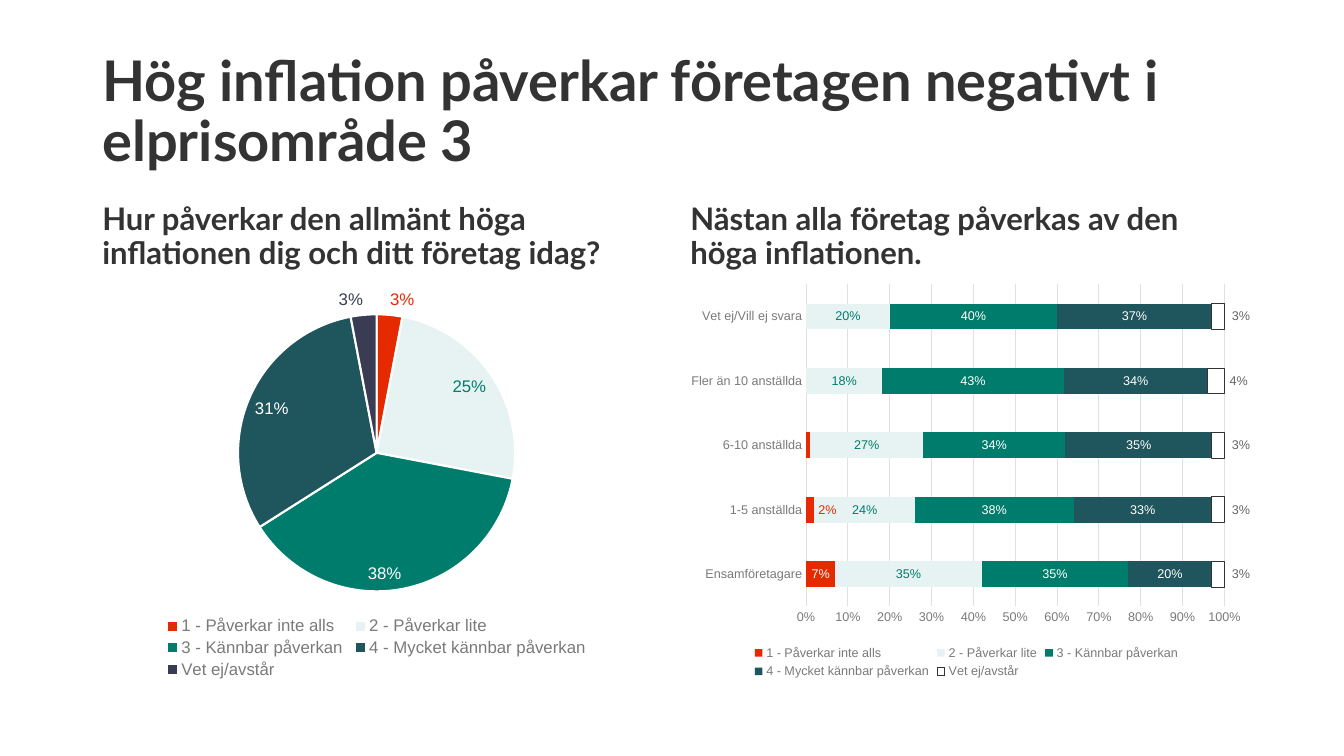
from dataclasses import dataclass

from lxml import etree
from pptx import Presentation
from pptx.chart.data import CategoryChartData
from pptx.dml.color import RGBColor
from pptx.enum.chart import XL_CHART_TYPE, XL_LABEL_POSITION, XL_LEGEND_POSITION, XL_TICK_MARK
from pptx.enum.text import MSO_ANCHOR, MSO_AUTO_SIZE, PP_ALIGN
from pptx.oxml.ns import qn
from pptx.util import Pt

PIE = XL_CHART_TYPE.PIE
STACKED_BARS = XL_CHART_TYPE.BAR_STACKED_100
CENTER = XL_LABEL_POSITION.CENTER
INSIDE = XL_LABEL_POSITION.INSIDE_END
OUTSIDE = XL_LABEL_POSITION.OUTSIDE_END
LEGEND_BOTTOM = XL_LEGEND_POSITION.BOTTOM
NO_TICK = XL_TICK_MARK.NONE
MIDDLE = MSO_ANCHOR.MIDDLE
BOTTOM = MSO_ANCHOR.BOTTOM
LEFT = PP_ALIGN.LEFT
NO_AUTOFIT = MSO_AUTO_SIZE.NONE
C15 = "http://schemas.microsoft.com/office/drawing/2012/chart"
LABEL_EXTENSION = "{CE6537A1-D6FC-4f65-9D91-7224C49458BB}"


@dataclass(frozen=True)
class Theme:
    heading_font: str = "Lato"
    chart_font: str = "Arial"
    ink: str = "333333"
    muted: str = "7A7A7A"
    label_gray: str = "666666"
    grid: str = "E0E0E0"
    white: str = "FFFFFF"
    red: str = "E52A00"
    mint: str = "E6F3F2"
    green: str = "007C6C"
    teal: str = "1F555C"
    navy: str = "3A3C54"
    title_size: float = 40
    subhead_size: float = 22.2
    chart_size: float = 10
    pie_size: float = 12
    bar_size: float = 9


THEME = Theme()
PERCENT = "###0%"
ANSWERS = ["1 - Påverkar inte alls", "2 - Påverkar lite", "3 - Kännbar påverkan",
           "4 - Mycket kännbar påverkan", "Vet ej/avstår"]
PIE_SHARES = [0.03, 0.25, 0.38, 0.31, 0.03]
COMPANY_SIZES = ["Ensamföretagare", "1-5 anställda", "6-10 anställda",
                 "Fler än 10 anställda", "Vet ej/Vill ej svara"]
SHARES_BY_ANSWER = [
    [0.07, 0.02, 0.01, 0, 0],
    [0.35, 0.24, 0.27, 0.18, 0.2],
    [0.35, 0.38, 0.34, 0.43, 0.4],
    [0.2, 0.33, 0.35, 0.34, 0.37],
    [0.03, 0.03, 0.03, 0.04, 0.03],
]


def rgb(color):
    return RGBColor.from_string(color)


def style_font(font, face, size, color, bold=False):
    font.name = face
    font.size = Pt(size)
    font.bold = bold
    font.color.rgb = rgb(color)


def style_chart_font(font, size, color):
    style_font(font, THEME.chart_font, size, color)


def fill_solid(part, color):
    part.format.fill.solid()
    part.format.fill.fore_color.rgb = rgb(color)


def draw_line(line, color, width):
    line.color.rgb = rgb(color)
    line.width = Pt(width)


def write_heading(shape, text, box, size, anchor):
    shape.left, shape.top, shape.width, shape.height = map(Pt, box)
    frame = shape.text_frame
    frame.text = text
    frame.word_wrap = True
    frame.auto_size = NO_AUTOFIT
    frame.vertical_anchor = anchor
    paragraph = frame.paragraphs[0]
    paragraph.alignment = LEFT
    paragraph.line_spacing = 0.9
    style_font(paragraph.runs[0].font, THEME.heading_font, size, THEME.ink, True)


def add_subhead(slide, text, box):
    write_heading(slide.shapes.add_textbox(*map(Pt, box)), text, box, THEME.subhead_size, BOTTOM)


def set_layout(parent, index, **fractions):
    for old in parent.findall(qn("c:layout")):
        parent.remove(old)
    layout = etree.Element(qn("c:layout"))
    manual = etree.SubElement(layout, qn("c:manualLayout"))
    for tag, value in fractions.items():
        etree.SubElement(manual, qn(f"c:{tag}")).set("val", str(value))
    parent.insert(index, layout)


def place_in_chart(parent, index, x, y, w, h, **target):
    set_layout(parent, index, **target, xMode="edge", yMode="edge", x=x, y=y, w=w, h=h)


def add_survey_chart(slide, kind, box, categories, series, legend_size, plot_box, legend_box):
    data = CategoryChartData(number_format=PERCENT)
    data.categories = categories
    for name, shares in series:
        data.add_series(name, shares)
    chart = slide.shapes.add_chart(kind, *map(Pt, box), data).chart
    chart.has_title = False
    style_chart_font(chart.font, THEME.chart_size, THEME.ink)
    chart.has_legend = True
    legend = chart.legend
    legend.position = LEGEND_BOTTOM
    legend.include_in_layout = False
    style_chart_font(legend.font, legend_size, THEME.muted)
    place_in_chart(chart.plots[0]._element.getparent(), 0, *plot_box, layoutTarget="inner")
    place_in_chart(legend._element, 1, *legend_box)
    return chart


def show_labels(series, size, color, position):
    labels = series.data_labels
    labels.show_value = True
    labels.number_format = PERCENT
    labels.number_format_is_linked = False
    labels.position = position
    style_chart_font(labels.font, size, color)


def point_label(series, index, size, color, position):
    label = series.points[index].data_label
    style_chart_font(label.font, size, color)
    label.position = position
    return series.data_labels._element.xpath(f'c:dLbl[c:idx/@val="{index}"]')[0]


def hide_label(element):
    for child in element[1:]:
        element.remove(child)
    etree.SubElement(element, qn("c:delete")).set("val", "1")


def hide_leader_lines(series):
    labels = series.data_labels._element
    for switch in labels.findall(qn("c:showLeaderLines")):
        switch.set("val", "0")
    extensions = etree.SubElement(labels, qn("c:extLst"))
    extension = etree.SubElement(extensions, qn("c:ext"), nsmap={"c15": C15})
    extension.set("uri", LABEL_EXTENSION)
    etree.SubElement(extension, f"{{{C15}}}showLeaderLines").set("val", "0")


def add_answer_pie(slide, box):
    chart = add_survey_chart(slide, PIE, box, ANSWERS, [("Series 1", PIE_SHARES)], THEME.pie_size,
                             (0.256, 0.094, 0.488, 0.682), (0.12, 0.83, 0.76, 0.17))
    chart.plots[0].vary_by_categories = True
    answers = chart.plots[0].series[0]
    show_labels(answers, THEME.pie_size, THEME.white, INSIDE)
    for index, color in enumerate([THEME.red, THEME.mint, THEME.green, THEME.teal, THEME.navy]):
        fill_solid(answers.points[index], color)
        draw_line(answers.points[index].format.line, THEME.white, 1.5)
    for index, color, position in [(0, THEME.red, OUTSIDE), (1, THEME.green, INSIDE),
                                   (4, THEME.navy, OUTSIDE)]:
        point_label(answers, index, THEME.pie_size, color, position)


def style_axes(chart):
    sizes, shares = chart.category_axis, chart.value_axis
    for axis in (sizes, shares):
        axis.major_tick_mark = axis.minor_tick_mark = NO_TICK
        style_chart_font(axis.tick_labels.font, THEME.bar_size, THEME.muted)
    draw_line(sizes.format.line, THEME.grid, 0.75)
    shares.format.line.fill.background()
    shares.minimum_scale, shares.maximum_scale, shares.major_unit = 0, 1, 0.1
    draw_line(shares.major_gridlines.format.line, THEME.grid, 0.75)
    shares.tick_labels.number_format = PERCENT
    shares.tick_labels.number_format_is_linked = False


def add_company_bars(slide, box):
    chart = add_survey_chart(slide, STACKED_BARS, box, COMPANY_SIZES, zip(ANSWERS, SHARES_BY_ANSWER),
                             THEME.bar_size, (0.22, 0.02, 0.732, 0.793), (0.123, 0.9, 0.755, 0.1))
    style_axes(chart)
    plot = chart.plots[0]
    plot.gap_width, plot.overlap, plot.vary_by_categories = 150, 100, False
    fills = [THEME.red, THEME.mint, THEME.green, THEME.teal, THEME.white]
    label_colors = [THEME.white, THEME.green, THEME.white, THEME.white, THEME.label_gray]
    for series, fill, label_color in zip(plot.series, fills, label_colors):
        series.invert_if_negative = False
        fill_solid(series, fill)
        show_labels(series, THEME.bar_size, label_color, CENTER)
    unaffected, undecided = plot.series[0], plot.series[-1]
    draw_line(undecided.format.line, THEME.ink, 0.75)
    for index in (2, 3, 4):
        hide_label(point_label(unaffected, index, THEME.bar_size, THEME.white, CENTER))
    beside_bars = [(unaffected, 1, THEME.red, 0.03)]
    beside_bars += [(undecided, index, THEME.label_gray, 0.04) for index in range(len(COMPANY_SIZES))]
    for series, index, color, shift in beside_bars:
        set_layout(point_label(series, index, THEME.bar_size, color, CENTER), 1, x=shift, y=0)
    for series in (unaffected, undecided):
        hide_leader_lines(series)


def main():
    deck = Presentation()
    deck.slide_width, deck.slide_height = Pt(960), Pt(540)
    slide = deck.slides.add_slide(deck.slide_layouts[5])
    write_heading(slide.shapes.title, "Hög inflation påverkar företagen negativt i elprisområde 3",
                  (66, 28.75, 828, 104.4), THEME.title_size, MIDDLE)
    columns = [
        (66, 406.1, "Hur påverkar den allmänt höga inflationen dig och ditt företag idag?", add_answer_pie),
        (486, 408.2, "Nästan alla företag påverkas av den höga inflationen.", add_company_bars),
    ]
    for left, width, question, add_answers in columns:
        add_subhead(slide, question, (left, 132.4, width, 64.9))
        add_answers(slide, (left, 197.3, width, 290.2))
    deck.save("out.pptx")


if __name__ == "__main__":
    main()
